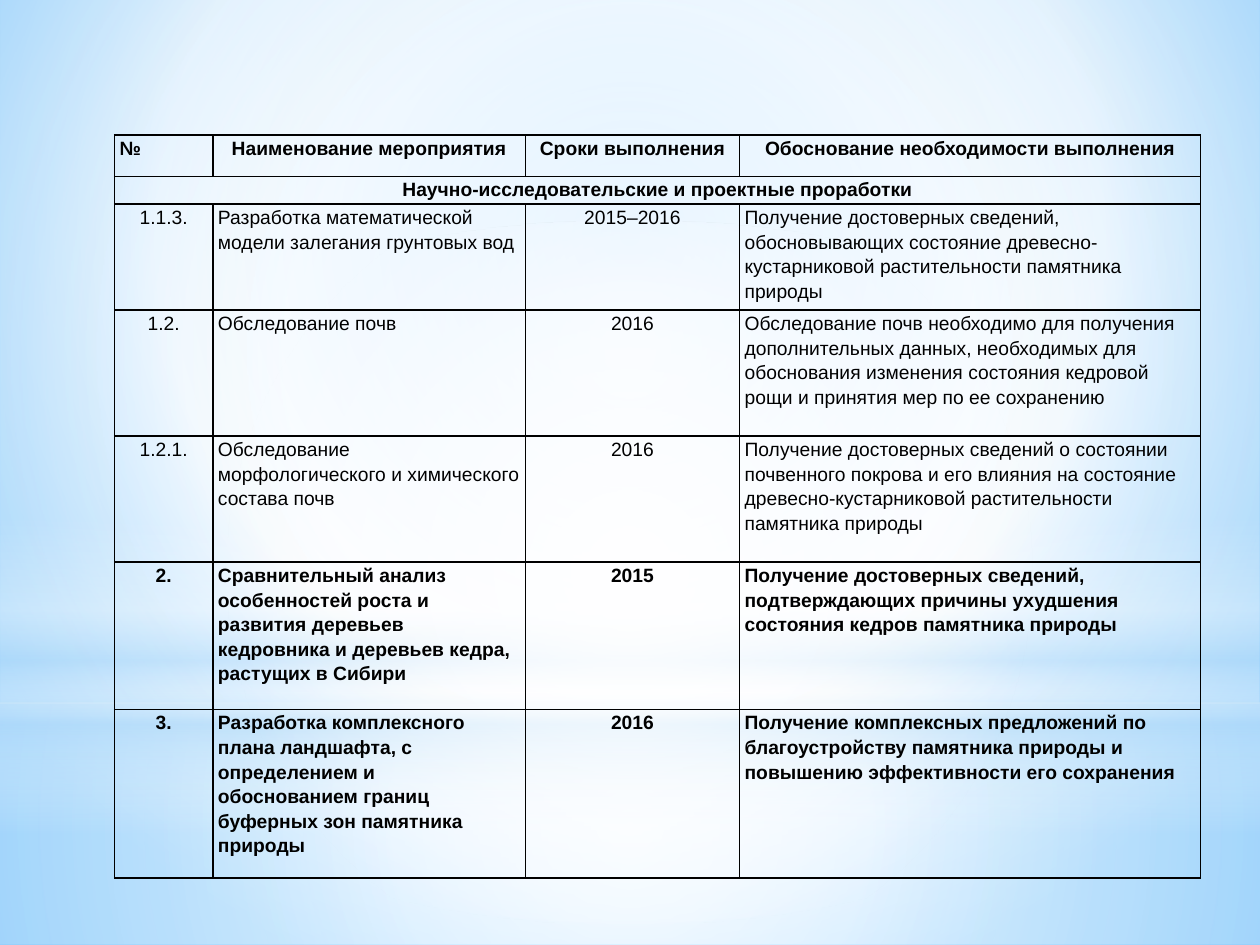
from dataclasses import dataclass

from lxml import etree
from pptx import Presentation
from pptx import util as u
from pptx.dml import color
from pptx.enum import shapes, text
from pptx.oxml import ns


@dataclass(frozen=True)
class Theme:
    ink: str = "000000"
    white: str = "FFFFFF"
    haze: str = "B4DCFA"
    sky: str = "9ED5FF"
    deep_sky: str = "5BB9FF"
    font: str = "Arial"
    size: int = 11
    border: int = 1
    line_spacing: float = 1.15


THEME = Theme()
CENTER = (50, 50, 50, 50)
SLIDE_BOX = (0, 0, 10, 7.5)
TABLE_BOX = (0.91, 1.07, 8.62, 5.9)
COLUMN_WIDTHS = (0.78, 2.48, 1.7, 3.66)
ROW_HEIGHTS = (0.33, 0.22, 0.84, 1, 1, 1.17, 1.34)
SECTION_ROW = 1
BOLD_ROWS = {0, SECTION_ROW, 5, 6}
ROWS = (
    ("№", "Наименование мероприятия", "Сроки выполнения",
     "Обоснование необходимости выполнения"),
    ("Научно-исследовательские и проектные проработки", "", "", ""),
    ("1.1.3.", "Разработка математической модели залегания грунтовых вод", "2015–2016",
     "Получение достоверных сведений, обосновывающих состояние "
     "древесно-кустарниковой растительности памятника природы"),
    ("1.2.", "Обследование почв", "2016",
     "Обследование почв необходимо для получения дополнительных данных, необходимых для "
     "обоснования изменения состояния кедровой рощи и принятия мер по ее сохранению"),
    ("1.2.1.", "Обследование морфологического и химического состава почв", "2016",
     "Получение достоверных сведений о состоянии почвенного покрова и его влияния на "
     "состояние древесно-кустарниковой растительности памятника природы"),
    ("2.", "Сравнительный анализ особенностей роста и развития деревьев кедровника "
     "и деревьев кедра, растущих в Сибири", "2015",
     "Получение достоверных сведений, подтверждающих причины ухудшения состояния "
     "кедров памятника природы"),
    ("3.", "Разработка комплексного плана ландшафта, с определением и обоснованием "
     "границ буферных зон памятника природы", "2016",
     "Получение комплексных предложений по благоустройству памятника природы и "
     "повышению эффективности его сохранения"),
)


def set_attributes(target, values):
    for name, value in values.items():
        setattr(target, name, value)


def add_node(parent, tag, **values):
    return etree.SubElement(parent, ns.qn(tag), {k: str(v) for k, v in values.items()})


def set_gradient(owner, fill, stops, focus=None):
    fill.gradient()
    gradient = owner.find(".//" + ns.qn("a:gradFill"))
    for child in list(gradient):
        gradient.remove(child)
    stop_list = add_node(gradient, "a:gsLst")
    for position, rgb, opacity in stops:
        stop = add_node(stop_list, "a:gs", pos=position * 1000)
        tint = add_node(stop, "a:srgbClr", val=rgb)
        if opacity < 100:
            add_node(tint, "a:alpha", val=opacity * 1000)
    if focus:
        shade = add_node(gradient, "a:path", path="circle")
        add_node(shade, "a:fillToRect", **{k: v * 1000 for k, v in zip("ltrb", focus)})
    else:
        add_node(gradient, "a:lin", ang=90 * 60000, scaled=0)


def add_glow(page, kind, box, stops, focus=None):
    glow = page.shapes.add_shape(kind, *map(u.Inches, box))
    glow.shadow.inherit = False
    glow.line.fill.background()
    set_gradient(glow.element, glow.fill, stops, focus)


def add_backdrop(page, box):
    left, top, width, height = box
    white, haze = THEME.white, THEME.haze
    rectangle, oval = shapes.MSO_SHAPE.RECTANGLE, shapes.MSO_SHAPE.OVAL
    horizon = 5.58
    set_gradient(page.element, page.background.fill,
                 ((0, THEME.sky, 100), (60, white, 100), (100, THEME.deep_sky, 100)),
                 (20, 10, 20, 60))
    add_glow(page, rectangle, (left, top + horizon, width, height - horizon),
             ((0, white, 91), (37, white, 76), (100, haze, 79)), CENTER)
    add_glow(page, rectangle, (left, top, width, horizon),
             ((0, white, 89), (48, white, 62), (100, haze, 79)), CENTER)
    add_glow(page, rectangle, (left, top + 4.12, width, 2.5),
             ((0, white, 0), (29, white, 30), (45, haze, 40),
              (55, white, 26), (65, haze, 60), (100, white, 0)))
    add_glow(page, oval, (left, top + 1.75, width, horizon),
             ((0, white, 100), (56, white, 0)), CENTER)


def add_borders(cell):
    properties = cell._tc.get_or_add_tcPr()
    for index, side in enumerate(("L", "R", "T", "B")):
        line = add_node(properties, f"a:ln{side}", w=u.Pt(THEME.border))
        add_node(add_node(line, "a:solidFill"), "a:srgbClr", val=THEME.ink)
        properties.insert(index, line)


def write_cell(cell, wording, bold, centered):
    set_attributes(cell, {
        "margin_left": u.Inches(0.04), "margin_right": u.Inches(0.04),
        "margin_top": 0, "margin_bottom": 0,
        "vertical_anchor": text.MSO_ANCHOR.TOP,
    })
    cell.fill.background()
    add_borders(cell)
    para = cell.text_frame.paragraphs[0]
    align = text.PP_ALIGN.CENTER if centered else text.PP_ALIGN.LEFT
    set_attributes(para, {"alignment": align, "line_spacing": THEME.line_spacing})
    span = para.add_run()
    span.text = wording
    set_attributes(span.font, {"name": THEME.font, "size": u.Pt(THEME.size), "bold": bold})
    span.font.color.rgb = color.RGBColor.from_string(THEME.ink)


def add_plan_table(page, box):
    frame = page.shapes.add_table(len(ROWS), len(COLUMN_WIDTHS), *map(u.Inches, box))
    table = frame.table
    set_attributes(table, {"first_row": False, "horz_banding": False})
    for column, width in zip(table.columns, COLUMN_WIDTHS):
        column.width = u.Inches(width)
    for row, height in zip(table.rows, ROW_HEIGHTS):
        row.height = u.Inches(height)
    for r, wordings in enumerate(ROWS):
        for c, wording in enumerate(wordings):
            centered = c > 0 if r == 0 else r == SECTION_ROW or c in (0, 2)
            write_cell(table.cell(r, c), wording, r in BOLD_ROWS, centered)
    table.cell(SECTION_ROW, 0).merge(table.cell(SECTION_ROW, len(COLUMN_WIDTHS) - 1))


def main():
    deck = Presentation()
    set_attributes(deck, {"slide_width": u.Inches(10), "slide_height": u.Inches(7.5)})
    page = deck.slides.add_slide(deck.slide_layouts.get_by_name("Blank"))
    add_backdrop(page, SLIDE_BOX)
    add_plan_table(page, TABLE_BOX)
    deck.save("out.pptx")


if __name__ == "__main__":
    main()
